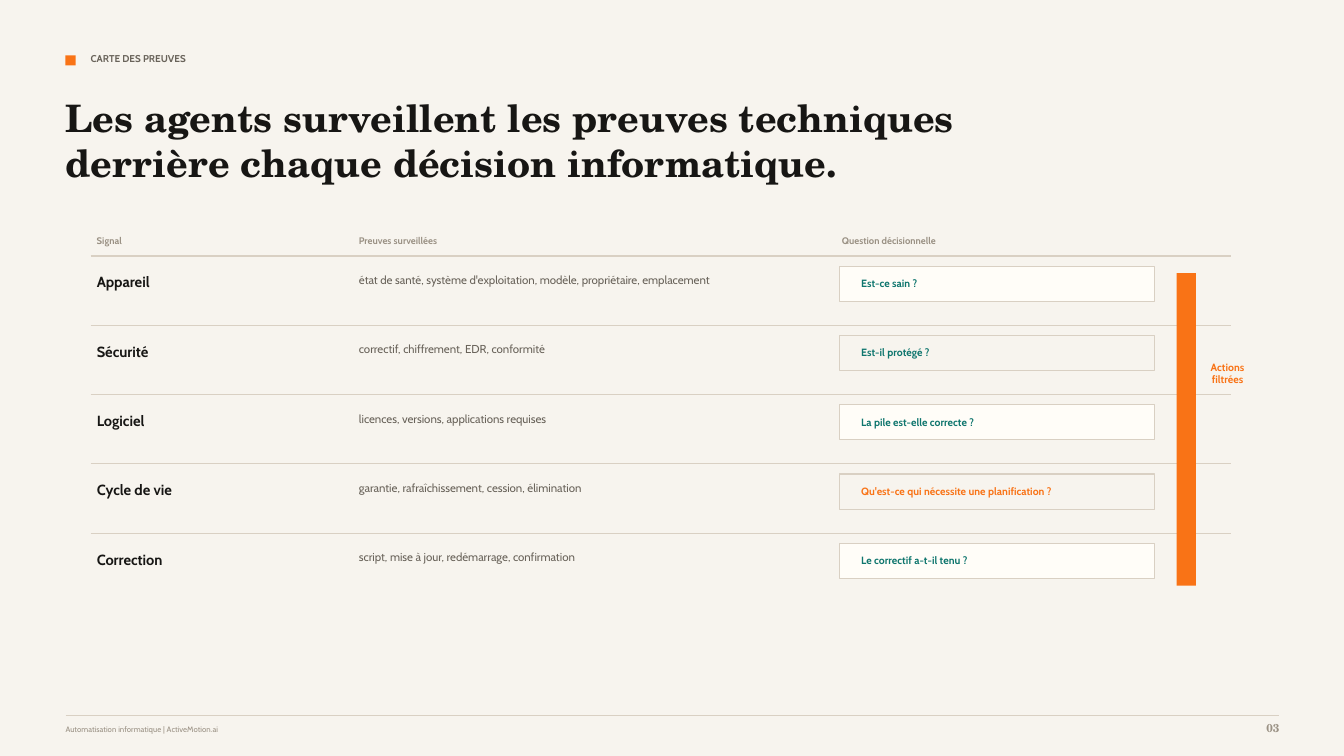
from lxml import etree
from pptx import Presentation
from pptx.dml.color import RGBColor
from pptx.enum.shapes import MSO_CONNECTOR, MSO_SHAPE
from pptx.enum.text import PP_ALIGN
from pptx.oxml.ns import qn
from pptx.util import Inches, Pt

STRAIGHT = MSO_CONNECTOR.STRAIGHT
RECTANGLE = MSO_SHAPE.RECTANGLE
LEFT, CENTER, RIGHT = PP_ALIGN.LEFT, PP_ALIGN.CENTER, PP_ALIGN.RIGHT

PAPER = RGBColor(0xF7, 0xF4, 0xEE)
CARD = RGBColor(0xFF, 0xFD, 0xF8)
INK = RGBColor(0x17, 0x16, 0x14)
BODY = RGBColor(0x69, 0x63, 0x5A)
MUTED = RGBColor(0x9A, 0x91, 0x84)
BORDER = RGBColor(0xD9, 0xD0, 0xC3)
ORANGE = RGBColor(0xF9, 0x73, 0x16)
TEAL = RGBColor(0x0F, 0x76, 0x6E)

SANS = "Cabin"
SERIF = "TeX Gyre Schola"

SIGNAL_X, EVIDENCE_X, QUESTION_X = 0.96, 3.56, 8.33
FIRST_ROW_Y, LAST_ROW_Y = 2.54, 5.29

HEADERS = [
    ("Signal", SIGNAL_X, 1.67),
    ("Preuves surveillées", EVIDENCE_X, 3.23),
    ("Question décisionnelle", 8.35, 2.92),
]
ROWS = [
    ("Appareil", "état de santé, système d'exploitation, modèle, propriétaire, emplacement",
     "Est-ce sain ?", TEAL),
    ("Sécurité", "correctif, chiffrement, EDR, conformité", "Est-il protégé ?", TEAL),
    ("Logiciel", "licences, versions, applications requises",
     "La pile est-elle correcte ?", TEAL),
    ("Cycle de vie", "garantie, rafraîchissement, cession, élimination",
     "Qu'est-ce qui nécessite une planification ?", ORANGE),
    ("Correction", "script, mise à jour, redémarrage, confirmation",
     "Le correctif a-t-il tenu ?", TEAL),
]


class SlideBuilder:
    """Draws the elements of the current slide in one shared style."""

    def __init__(self, slide):
        self.slide = slide
        self.slide.background.fill.solid()
        self.slide.background.fill.fore_color.rgb = PAPER

    def text(self, words, left, top, width, height, size, color,
             bold=True, font=SANS, align=LEFT):
        box = self.slide.shapes.add_textbox(
            Inches(left), Inches(top), Inches(width), Inches(height))
        frame = box.text_frame
        frame.word_wrap = True
        frame.margin_left = frame.margin_right = 0
        frame.margin_top = frame.margin_bottom = 0
        paragraph = frame.paragraphs[0]
        paragraph.alignment = align
        run = paragraph.add_run()
        run.text = words
        run.font.name = font
        run.font.size = Pt(size)
        run.font.bold = bold
        run.font.color.rgb = color

    def rectangle(self, left, top, width, height, fill=None, line=None):
        shape = self.slide.shapes.add_shape(
            RECTANGLE, Inches(left), Inches(top), Inches(width), Inches(height))
        shape.shadow.inherit = False
        if fill is None:
            shape.fill.background()
        else:
            shape.fill.solid()
            shape.fill.fore_color.rgb = fill
        if line is None:
            shape.line.fill.background()
        else:
            shape.line.color.rgb = line
            shape.line.width = Pt(0.75)

    def rule(self, left, top, width):
        connector = self.slide.shapes.add_connector(
            STRAIGHT, Inches(left), Inches(top), Inches(left + width), Inches(top))
        connector.line.color.rgb = BORDER
        connector.line.width = Pt(0.75)
        etree.SubElement(connector._element.spPr, qn("a:effectLst"))

    def row(self, top, signal, evidence, question, color, fill):
        self.rule(0.9, top, 11.31)
        self.text(signal, SIGNAL_X, top + 0.17, 1.88, 0.19, 10.5, INK)
        self.text(evidence, EVIDENCE_X, top + 0.17, 3.75, 0.35, 8.2, BODY, bold=False)
        self.rectangle(QUESTION_X, top + 0.1, 3.12, 0.35, fill, BORDER)
        self.text(question, QUESTION_X + 0.21, top + 0.21, 2.71, 0.16, 7.5, color)


def main():
    presentation = Presentation()
    presentation.slide_width = Inches(13.33)
    presentation.slide_height = Inches(7.5)
    builder = SlideBuilder(presentation.slides.add_slide(presentation.slide_layouts[6]))

    builder.rectangle(0.65, 0.55, 0.1, 0.1, ORANGE)
    builder.text("CARTE DES PREUVES", 0.9, 0.52, 6.46, 0.19, 7.1, BODY)
    builder.text("Les agents surveillent les preuves techniques derrière chaque "
                 "décision informatique.", 0.65, 0.94, 8.85, 1.04, 27, INK, font=SERIF)

    for label, left, width in HEADERS:
        builder.text(label, left, 2.33, width, 0.17, 6.8, MUTED)
    pitch = (LAST_ROW_Y - FIRST_ROW_Y) / (len(ROWS) - 1)
    for index, row in enumerate(ROWS):
        fill = CARD if index % 2 == 0 else None
        builder.row(FIRST_ROW_Y + index * pitch, *row, fill)

    builder.rectangle(11.67, 2.71, 0.19, 3.1, ORANGE)
    builder.text("Actions filtrées", 12, 3.58, 0.35, 1.23, 7.5, ORANGE, align=CENTER)

    builder.rule(0.65, 7.1, 12.04)
    builder.text("Automatisation informatique | ActiveMotion.ai",
                 0.65, 7.19, 7.92, 0.15, 5.6, MUTED, bold=False)
    builder.text("03", 12.19, 7.15, 0.5, 0.19, 8.2, MUTED, font=SERIF, align=RIGHT)
    presentation.save("out.pptx")


if __name__ == "__main__":
    main()
